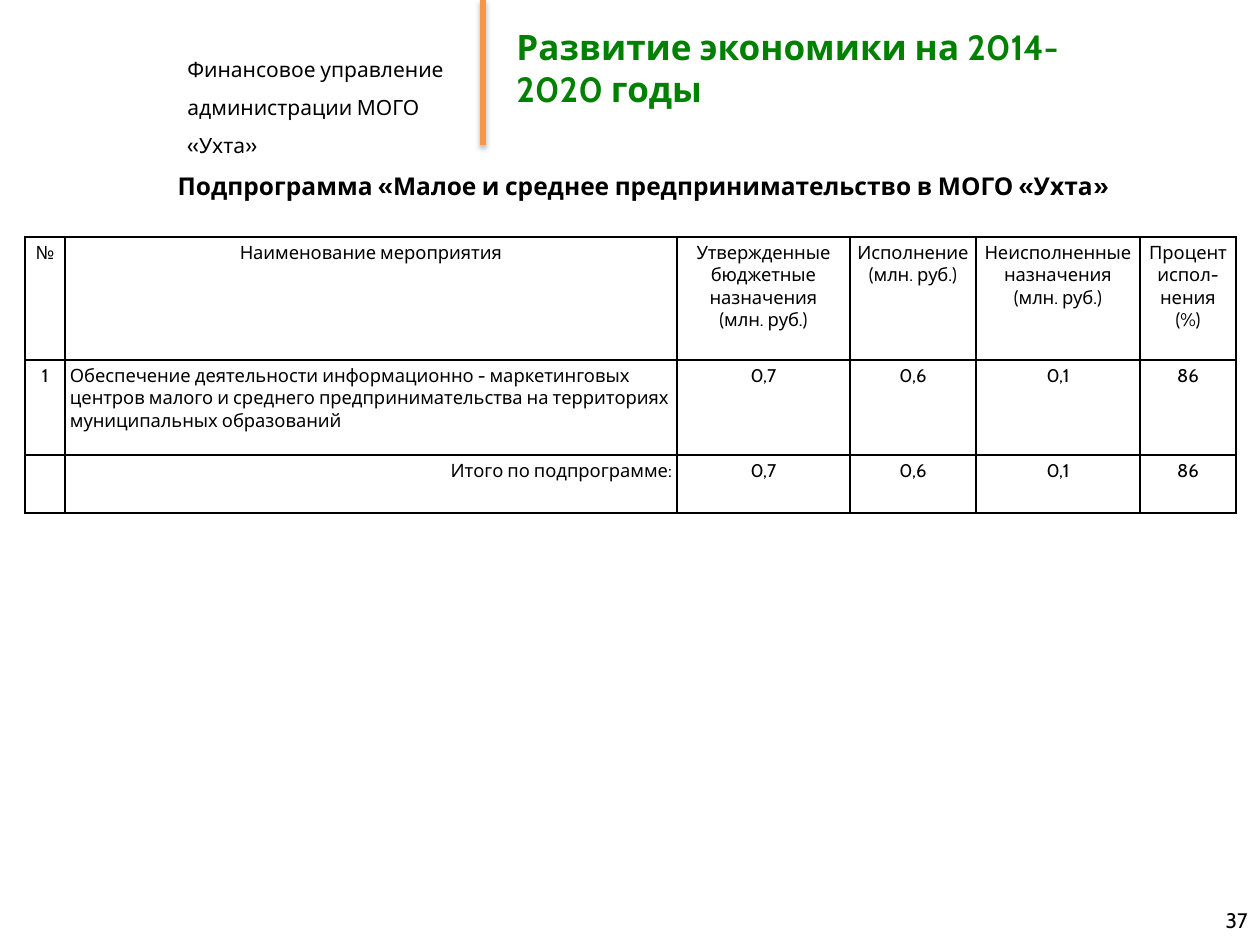
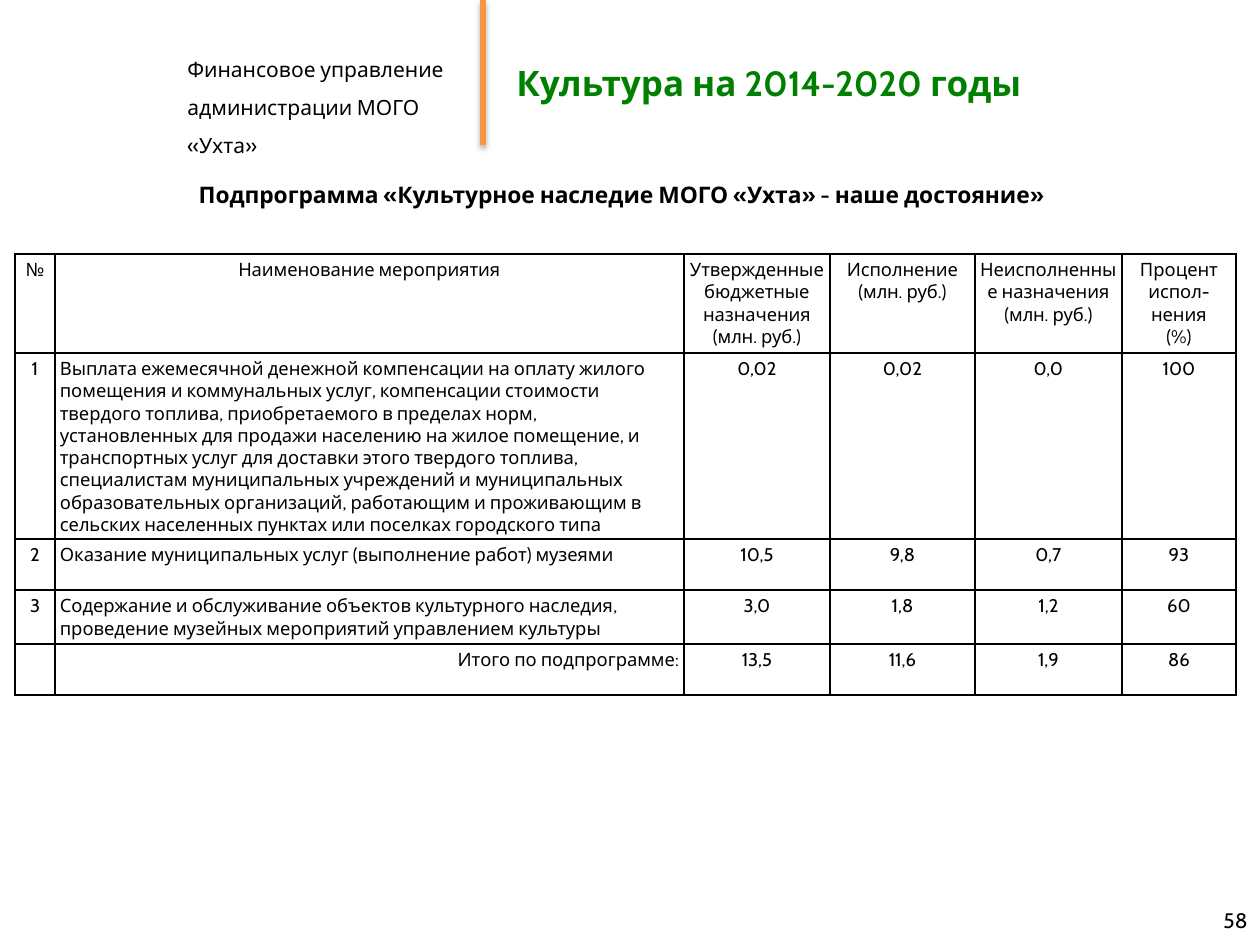
"""Build two budget-execution slides for the Ukhta municipal programmes."""
from lxml import etree
from pptx import Presentation
from pptx.dml.color import RGBColor
from pptx.enum.shapes import MSO_CONNECTOR
from pptx.enum.text import MSO_ANCHOR, PP_ALIGN
from pptx.oxml import parse_xml
from pptx.oxml.ns import qn
from pptx.util import Pt

EMU_PER_PX = 914400 / 126
LEFT, CENTER, RIGHT = PP_ALIGN.LEFT, PP_ALIGN.CENTER, PP_ALIGN.RIGHT
TOP, MIDDLE = MSO_ANCHOR.TOP, MSO_ANCHOR.MIDDLE
STRAIGHT = MSO_CONNECTOR.STRAIGHT
BLACK = RGBColor(0x00, 0x00, 0x00)
GREEN = RGBColor(0x00, 0x80, 0x00)
ORANGE = RGBColor(0xF7, 0x96, 0x46)
FONT = "Cabin"
CELL_MARGIN = 5
DRAWING_NS = 'xmlns:a="http://schemas.openxmlformats.org/drawingml/2006/main"'
DIVIDER_SHADOW = (
    f'<a:effectLst {DRAWING_NS}><a:outerShdw blurRad="40000" dist="23000" dir="5400000" rotWithShape="0">'
    '<a:srgbClr val="000000"><a:alpha val="35000"/></a:srgbClr></a:outerShdw></a:effectLst>'
)

DEPARTMENT = "Финансовое управление\nадминистрации МОГО «Ухта»"
COLUMN_HEADS = (
    "№",
    "Наименование мероприятия",
    "Утвержденные бюджетные назначения\n(млн. руб.)",
    "Исполнение\n(млн. руб.)",
    "Неисполненные назначения\n(млн. руб.)",
    "Процент испол-нения\n(%)",
)
TOTAL = "Итого по подпрограмме:"

PROGRAMMES = [
    {
        "title": "Развитие экономики на 2014-2020 годы",
        "title_width": 583,
        "title_spacing": 1.0,
        "caption": "Подпрограмма «Малое и среднее предпринимательство в МОГО «Ухта»",
        "caption_box": (117, 165, 1052, 102),
        "caption_size": 14,
        "table_corner": (25, 237),
        "columns": (40, 612, 173, 126, 164, 96),
        "row_heights": (123, 95, 58),
        "rows": [
            ("1", "Обеспечение деятельности информационно - маркетинговых центров малого и среднего "
                  "предпринимательства на территориях муниципальных образований",
             "0,7", "0,6", "0,1", "86"),
            ("", TOTAL, "0,7", "0,6", "0,1", "86"),
        ],
        "page": "37",
    },
    {
        "title": "Культура на 2014-2020 годы",
        "title_width": 615,
        "title_spacing": 1.7,
        "caption": "Подпрограмма «Культурное наследие МОГО «Ухта» - наше достояние»",
        "caption_box": (5, 175, 1232, 72),
        "caption_size": 13,
        "table_corner": (15, 254),
        "columns": (40, 629, 146, 145, 147, 114),
        "row_heights": (99, 186, 51, 54, 51),
        "rows": [
            ("1", "Выплата ежемесячной денежной компенсации на оплату жилого помещения и коммунальных "
                  "услуг, компенсации стоимости твердого топлива, приобретаемого в пределах норм, "
                  "установленных для продажи населению на жилое помещение, и транспортных услуг для "
                  "доставки этого твердого топлива, специалистам муниципальных учреждений и "
                  "муниципальных образовательных организаций, работающим и проживающим в сельских "
                  "населенных пунктах или поселках городского типа",
             "0,02", "0,02", "0,0", "100"),
            ("2", "Оказание муниципальных услуг (выполнение работ) музеями", "10,5", "9,8", "0,7", "93"),
            ("3", "Содержание и обслуживание объектов культурного наследия, проведение музейных "
                  "мероприятий управлением культуры",
             "3,0", "1,8", "1,2", "60"),
            ("", TOTAL, "13,5", "11,6", "1,9", "86"),
        ],
        "page": "58",
    },
]


def px(*lengths):
    return [round(length * EMU_PER_PX) for length in lengths]


def write(frame, text, size, color=BLACK, bold=False, align=LEFT, anchor=TOP, spacing=1.0):
    frame.text = text
    frame.word_wrap = True
    frame.vertical_anchor = anchor
    for paragraph in frame.paragraphs:
        paragraph.alignment = align
        paragraph.line_spacing = spacing
        paragraph.font.name = FONT
        paragraph.font.size = Pt(size)
        paragraph.font.bold = bold
        paragraph.font.color.rgb = color


deck = Presentation()
deck.slide_width, deck.slide_height = px(1260, 945)

for programme in PROGRAMMES:
    slide = deck.slides.add_slide(deck.slide_layouts[6])
    shapes = slide.shapes

    department = shapes.add_textbox(*px(175, 38, 315, 83))
    write(department.text_frame, DEPARTMENT, 12, spacing=1.5)

    divider = shapes.add_connector(STRAIGHT, *px(483, 0, 483, 145))
    divider.line.color.rgb = ORANGE
    divider.line.width = Pt(3)
    divider._element.spPr.append(parse_xml(DIVIDER_SHADOW))

    columns, row_heights = programme["columns"], programme["row_heights"]
    rows = [COLUMN_HEADS, *programme["rows"]]
    table_box = px(*programme["table_corner"], sum(columns), sum(row_heights))
    measures = shapes.add_table(len(rows), len(columns), *table_box).table
    measures.first_row = measures.horz_banding = False
    for column, width in zip(measures.columns, px(*columns)):
        column.width = width
    for row, height in zip(measures.rows, px(*row_heights)):
        row.height = height

    for row_index, values in enumerate(rows):
        for column_index, value in enumerate(values):
            cell = measures.cell(row_index, column_index)
            cell.margin_left = cell.margin_right = cell.margin_top = cell.margin_bottom = px(CELL_MARGIN)[0]
            align = CENTER
            if column_index == 1 and row_index > 0:
                align = RIGHT if value == TOTAL else LEFT
            write(cell.text_frame, value, 10.5, align=align)
            properties = cell._tc.get_or_add_tcPr()
            for side in ("a:lnL", "a:lnR", "a:lnT", "a:lnB"):
                border = etree.SubElement(properties, qn(side), w=str(Pt(1)))
                border_fill = etree.SubElement(border, qn("a:solidFill"))
                etree.SubElement(border_fill, qn("a:srgbClr"), val=str(BLACK))
            cell.fill.background()

    caption = shapes.add_textbox(*px(*programme["caption_box"]))
    write(caption.text_frame, programme["caption"], programme["caption_size"], bold=True, align=CENTER)

    title = shapes.add_textbox(*px(504, 4, programme["title_width"], 127))
    write(title.text_frame, programme["title"], 20, GREEN, bold=True, anchor=MIDDLE,
          spacing=programme["title_spacing"])

    page_number = shapes.add_textbox(*px(966, 895, 294, 50))
    write(page_number.text_frame, programme["page"], 12, align=RIGHT, anchor=MIDDLE)

deck.save("out.pptx")
